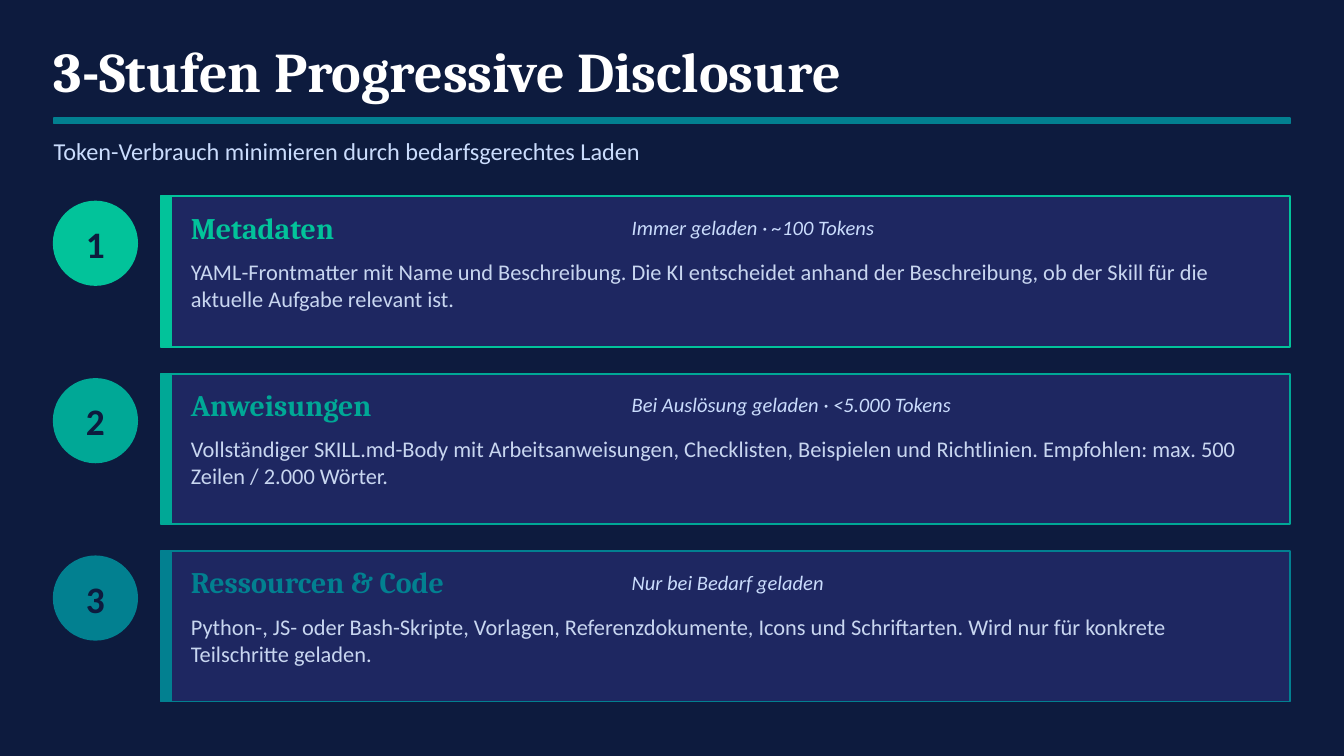
import dataclasses

import pptx
import pptx.dml.color
import pptx.enum.shapes
import pptx.enum.text
import pptx.util

Inches = pptx.util.Inches
SHAPE = pptx.enum.shapes.MSO_SHAPE
ALIGN = pptx.enum.text.PP_ALIGN
ANCHOR = pptx.enum.text.MSO_ANCHOR


@dataclasses.dataclass(frozen=True)
class Theme:
    background: str = "0D1B3E"
    card: str = "1E2761"
    title: str = "FFFFFF"
    subtitle: str = "CADCFC"
    body: str = "C8D6F0"
    rule: str = "028090"
    levels: tuple = ("02C39A", "00A896", "028090")
    heading_font: str = "Cambria"
    body_font: str = "Calibri"
    title_size: int = 30
    number_size: int = 20
    heading_size: int = 16
    subtitle_size: int = 13
    body_size: int = 12
    note_size: int = 11


def rgb(value):
    return pptx.dml.color.RGBColor.from_string(value)


class SlideBuilder:
    def __init__(self, slide, theme):
        self.slide = slide
        self.theme = theme
        fill = slide.background.fill
        fill.solid()
        fill.fore_color.rgb = rgb(theme.background)

    def shape(self, kind, left, top, width, height, fill, line):
        sp = self.slide.shapes.add_shape(
            kind, Inches(left), Inches(top), Inches(width), Inches(height))
        sp.shadow.inherit = False
        sp.fill.solid()
        sp.fill.fore_color.rgb = rgb(fill)
        sp.line.color.rgb = rgb(line)
        sp.line.width = pptx.util.Pt(1)

    def text(self, text, left, top, width, height, size, color, font=None,
             bold=False, italic=False, align=ALIGN.LEFT, anchor=ANCHOR.MIDDLE):
        sp = self.slide.shapes.add_textbox(
            Inches(left), Inches(top), Inches(width), Inches(height))
        tf = sp.text_frame
        tf.word_wrap = True
        tf.vertical_anchor = anchor
        tf.margin_left = tf.margin_right = tf.margin_top = tf.margin_bottom = 0
        tf.text = text
        p = tf.paragraphs[0]
        p.alignment = align
        r = p.runs[0]
        r.font.name = font or self.theme.body_font
        r.font.size = pptx.util.Pt(size)
        r.font.color.rgb = rgb(color)
        r.font.bold = bold
        r.font.italic = italic

    def header(self, title, subtitle):
        t = self.theme
        self.text(title, 0.4, 0.15, 9.2, 0.75, t.title_size, t.title,
                  t.heading_font, bold=True)
        self.shape(SHAPE.RECTANGLE, 0.4, 0.88, 9.2, 0.04, t.rule, t.rule)
        self.text(subtitle, 0.4, 0.95, 9.2, 0.35, t.subtitle_size, t.subtitle)

    def badge(self, number, top, color):
        t = self.theme
        box = (0.4, top, 0.62, 0.62)
        self.shape(SHAPE.OVAL, *box, color, color)
        self.text(str(number), *box, t.number_size, t.background,
                  bold=True, align=ALIGN.CENTER)

    def card(self, top, color, heading, note, body):
        t = self.theme
        self.shape(SHAPE.RECTANGLE, 1.2, top, 8.4, 1.12, t.card, color)
        self.shape(SHAPE.RECTANGLE, 1.2, top, 0.07, 1.12, color, color)
        self.text(heading, 1.42, top, 3.2, 0.46, t.heading_size, color,
                  t.heading_font, bold=True)
        self.text(note, 4.7, top, 4.9, 0.46, t.note_size, t.subtitle, italic=True)
        self.text(body, 1.42, top + 0.46, 7.98, 0.66, t.body_size, t.body,
                  anchor=ANCHOR.TOP)


LEVELS = [
    ("Metadaten", "Immer geladen · ~100 Tokens",
     "YAML-Frontmatter mit Name und Beschreibung. Die KI entscheidet anhand der "
     "Beschreibung, ob der Skill für die aktuelle Aufgabe relevant ist."),
    ("Anweisungen", "Bei Auslösung geladen · <5.000 Tokens",
     "Vollständiger SKILL.md-Body mit Arbeitsanweisungen, Checklisten, Beispielen "
     "und Richtlinien. Empfohlen: max. 500 Zeilen / 2.000 Wörter."),
    ("Ressourcen & Code", "Nur bei Bedarf geladen",
     "Python-, JS- oder Bash-Skripte, Vorlagen, Referenzdokumente, Icons und "
     "Schriftarten. Wird nur für konkrete Teilschritte geladen."),
]


def main():
    prs = pptx.Presentation()
    prs.slide_width = Inches(10)
    prs.slide_height = prs.slide_width * 9 // 16
    theme = Theme()
    s = SlideBuilder(prs.slides.add_slide(prs.slide_layouts[6]), theme)
    s.header("3-Stufen Progressive Disclosure",
             "Token-Verbrauch minimieren durch bedarfsgerechtes Laden")
    for i, (level, color) in enumerate(zip(LEVELS, theme.levels)):
        top = 1.46 + i * 1.32
        s.badge(i + 1, top + 0.04, color)
        s.card(top, color, *level)
    prs.save("out.pptx")


if __name__ == "__main__":
    main()
